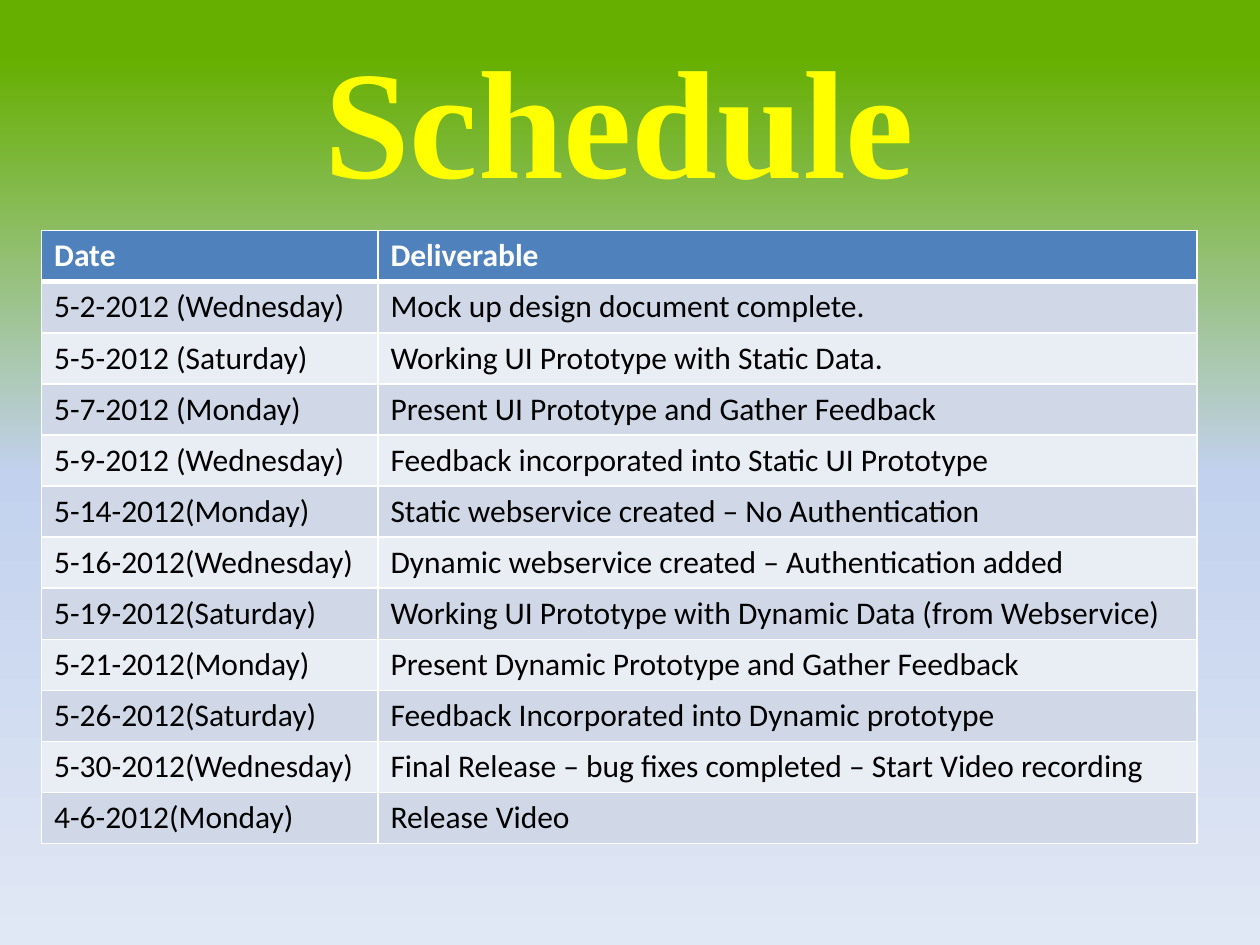
from copy import deepcopy

from lxml.etree import SubElement
from pptx import Presentation
from pptx.dml.color import RGBColor
from pptx.enum.text import MSO_ANCHOR, PP_ALIGN
from pptx.oxml.ns import qn
from pptx.util import Inches, Pt

TITLE = "Schedule"
ROWS = [
    ("Date", "Deliverable"),
    ("5-2-2012 (Wednesday)", "Mock up design document complete."),
    ("5-5-2012 (Saturday)", "Working UI Prototype with Static Data."),
    ("5-7-2012 (Monday)", "Present UI Prototype and Gather Feedback"),
    ("5-9-2012 (Wednesday)", "Feedback incorporated into Static UI Prototype"),
    ("5-14-2012(Monday)", "Static webservice created – No Authentication"),
    ("5-16-2012(Wednesday)", "Dynamic webservice created – Authentication added"),
    ("5-19-2012(Saturday)", "Working UI Prototype with Dynamic Data (from Webservice)"),
    ("5-21-2012(Monday)", "Present Dynamic Prototype and Gather Feedback"),
    ("5-26-2012(Saturday)", "Feedback Incorporated into Dynamic prototype"),
    ("5-30-2012(Wednesday)", "Final Release – bug fixes completed – Start Video recording"),
    ("4-6-2012(Monday)", "Release Video"),
]
COLUMN_WIDTHS = (2.67, 6.5)
ROW_HEIGHT = 4.87 / len(ROWS)
LEFT, WIDTH = Inches(0.33), Inches(sum(COLUMN_WIDTHS))

WHITE = RGBColor(0xFF, 0xFF, 0xFF)
BLACK = RGBColor(0x00, 0x00, 0x00)
YELLOW = RGBColor(0xFF, 0xFF, 0x00)
HEADER_BLUE = RGBColor(0x4F, 0x81, 0xBD)
BANDS = (RGBColor(0xE9, 0xED, 0xF4), RGBColor(0xD0, 0xD8, 0xE8))
BACKGROUND_STOPS = [
    (0.06, RGBColor(0x66, 0xAF, 0x00)),
    (0.5, RGBColor(0xC2, 0xD1, 0xED)),
    (1, RGBColor(0xE1, 0xE8, 0xF5)),
]


def paint_background(slide):
    fill = slide.background.fill
    fill.gradient()
    fill.gradient_angle = 270
    stop_list = next(slide.element.iter(qn("a:gsLst")))
    stop_list.append(deepcopy(stop_list[-1]))
    for stop, (position, color) in zip(fill.gradient_stops, BACKGROUND_STOPS):
        stop.position = position
        stop.color.rgb = color


def add_run(paragraph, text, font_name, size, color, bold):
    run = paragraph.add_run()
    run.text = text
    run.font.name = font_name
    run.font.size = Pt(size)
    run.font.color.rgb = color
    run.font.bold = bold


def set_borders(cell, top, bottom):
    properties = cell._tc.get_or_add_tcPr()
    for side, points in (("L", 1), ("R", 1), ("T", top), ("B", bottom)):
        line = SubElement(properties, qn(f"a:ln{side}"), w=str(Pt(points)))
        solid = SubElement(line, qn("a:solidFill"))
        SubElement(solid, qn("a:srgbClr"), val=str(WHITE))


def add_title(slide):
    title = slide.shapes.title
    title.left, title.top = LEFT, Inches(0.3)
    title.width, title.height = WIDTH, Inches(1.25)
    title.text_frame.vertical_anchor = MSO_ANCHOR.MIDDLE
    paragraph = title.text_frame.paragraphs[0]
    paragraph.alignment = PP_ALIGN.CENTER
    add_run(paragraph, TITLE, "Times New Roman", 88, YELLOW, True)


def add_schedule(slide):
    table = slide.shapes.add_table(
        len(ROWS), len(COLUMN_WIDTHS), LEFT, Inches(1.83),
        WIDTH, Inches(ROW_HEIGHT * len(ROWS)),
    ).table
    for column, width in zip(table.columns, COLUMN_WIDTHS):
        column.width = Inches(width)
    for row_index, texts in enumerate(ROWS):
        header = row_index == 0
        table.rows[row_index].height = Inches(ROW_HEIGHT)
        for column_index, text in enumerate(texts):
            cell = table.cell(row_index, column_index)
            set_borders(cell, 3 if row_index == 1 else 1, 3 if header else 1)
            cell.fill.solid()
            cell.fill.fore_color.rgb = HEADER_BLUE if header else BANDS[row_index % 2]
            add_run(cell.text_frame.paragraphs[0], text, "Calibri", 18,
                    WHITE if header else BLACK, header)


def main():
    presentation = Presentation()
    presentation.slide_width, presentation.slide_height = Inches(10), Inches(7.5)
    slide = presentation.slides.add_slide(presentation.slide_layouts[5])
    paint_background(slide)
    add_title(slide)
    add_schedule(slide)
    presentation.save("out.pptx")


if __name__ == "__main__":
    main()
